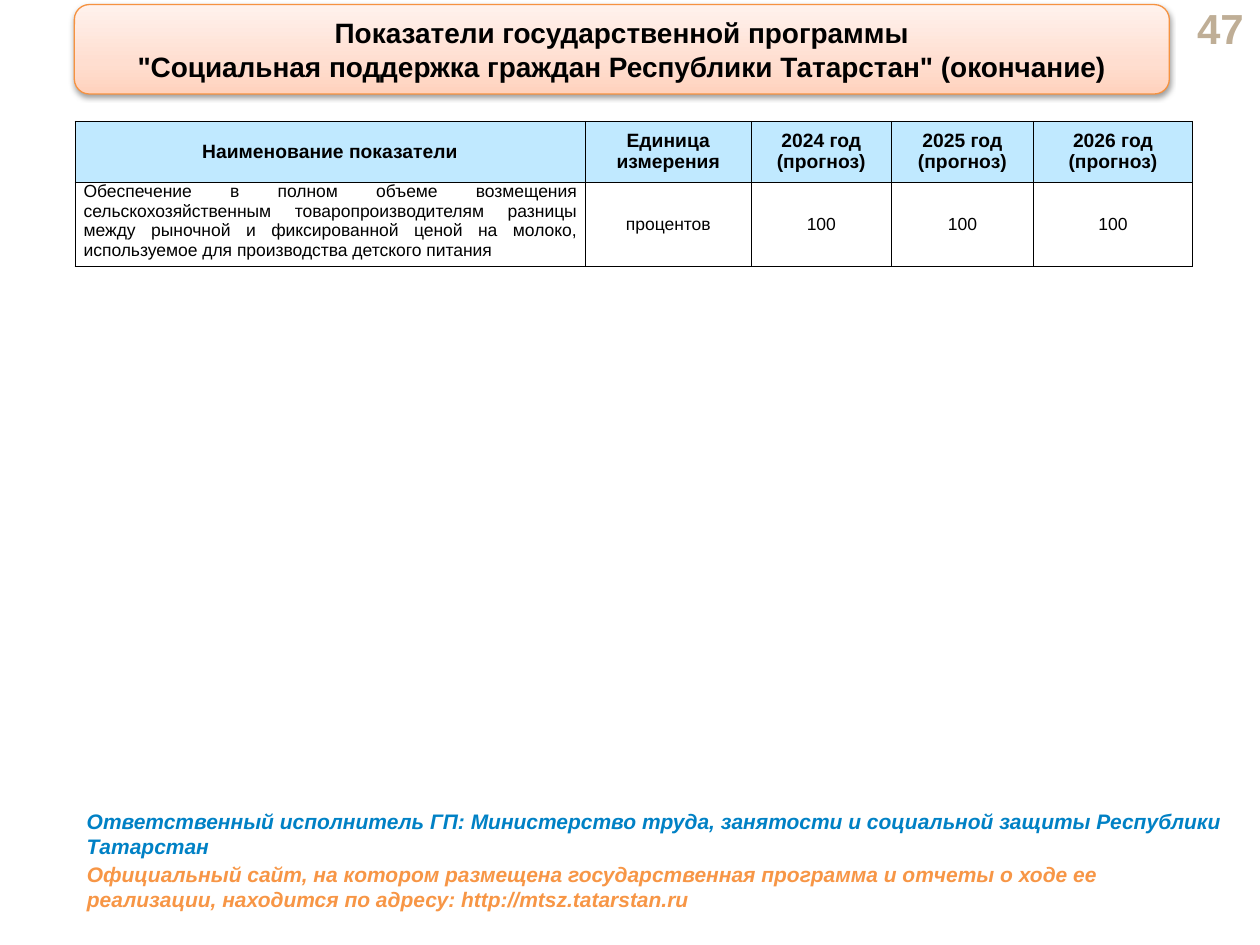
from lxml.etree import SubElement
from pptx import Presentation
from pptx.dml.color import RGBColor
from pptx.enum.shapes import MSO_SHAPE
from pptx.enum.text import MSO_ANCHOR, PP_ALIGN
from pptx.oxml import parse_xml
from pptx.oxml.ns import nsdecls, qn
from pptx.util import Pt

COLORS = {
    "text": "000000", "number": "BFAE96", "header": "C0E9FF", "cell": "FFFFFF",
    "border": "000000", "title_line": "F69240", "executor": "0081C5", "website": "F79646",
}
TITLE_GRADIENT = [(0, "FFD2BD"), (35, "FFDED0"), (100, "FFF2ED")]


def format_paragraph(paragraph, size, color, alignment, bold=False, italic=False):
    paragraph.alignment = alignment
    font = paragraph.font
    font.name, font.size, font.bold, font.italic = "Arial", Pt(size), bold, italic
    font.color.rgb = RGBColor.from_string(COLORS[color])


def add_text(slide, text, left, top, width, height, **style):
    frame = slide.shapes.add_textbox(Pt(left), Pt(top), Pt(width), Pt(height)).text_frame
    frame.word_wrap = True
    frame.text = text
    format_paragraph(frame.paragraphs[0], bold=True, **style)
    return frame


presentation = Presentation()
presentation.slide_width, presentation.slide_height = Pt(720), Pt(540)
slide = presentation.slides.add_slide(presentation.slide_layouts[6])

# Page number
number_frame = add_text(slide, "47", 655.9, 3.6, 61.9, 24.5,
                        size=24, color="number", alignment=PP_ALIGN.RIGHT)
number_frame.vertical_anchor = MSO_ANCHOR.MIDDLE

# Indicator table
rows = [
    ["Наименование показатели", "Единица измерения", "2024 год (прогноз)",
     "2025 год (прогноз)", "2026 год (прогноз)"],
    ["Обеспечение в полном объеме возмещения сельскохозяйственным товаропроизводителям "
     "разницы между рыночной и фиксированной ценой на молоко, используемое для "
     "производства детского питания", "процентов", "100", "100", "100"],
]
column_widths = [291.6, 95, 79.9, 81.4, 90.7]
row_heights = [34.8, 48]
table = slide.shapes.add_table(len(rows), len(column_widths), Pt(42.8), Pt(69.2),
                               Pt(sum(column_widths)), Pt(sum(row_heights))).table
for column, width in zip(table.columns, column_widths):
    column.width = Pt(width)
for row_index, texts in enumerate(rows):
    table.rows[row_index].height = Pt(row_heights[row_index])
    is_header = row_index == 0
    for column_index, text in enumerate(texts):
        is_description = not is_header and column_index == 0
        cell = table.cell(row_index, column_index)
        cell.text = text
        cell.margin_left = cell.margin_right = Pt(5)
        cell.margin_top = cell.margin_bottom = 0
        cell.vertical_anchor = MSO_ANCHOR.TOP if is_description else MSO_ANCHOR.MIDDLE
        format_paragraph(cell.text_frame.paragraphs[0], 11 if is_header else 10, "text",
                         PP_ALIGN.JUSTIFY if is_description else PP_ALIGN.CENTER,
                         bold=is_header)
        # Borders come before the fill in the cell properties
        properties = cell._tc.get_or_add_tcPr()
        for side in ("a:lnL", "a:lnR", "a:lnT", "a:lnB"):
            border = SubElement(properties, qn(side), w=str(Pt(0.25)))
            border_fill = SubElement(border, qn("a:solidFill"))
            SubElement(border_fill, qn("a:srgbClr"), val=COLORS["border"])
        if is_description:
            cell.fill.background()
        else:
            cell.fill.solid()
            cell.fill.fore_color.rgb = RGBColor.from_string(
                COLORS["header" if is_header else "cell"])

# Title panel
title = slide.shapes.add_shape(MSO_SHAPE.ROUNDED_RECTANGLE,
                               Pt(42.5), Pt(2.6), Pt(625.7), Pt(51.1))
title.line.width = Pt(0.75)
title.line.color.rgb = RGBColor.from_string(COLORS["title_line"])
title.text_frame.word_wrap = True
title.text_frame.text = ("Показатели государственной программы\n"
                         '"Социальная поддержка граждан Республики Татарстан" (окончание)')
for paragraph in title.text_frame.paragraphs:
    format_paragraph(paragraph, 16, "text", PP_ALIGN.CENTER, bold=True)

# Three-stop gradient and soft shadow of the panel
stops = "".join(f'<a:gs pos="{position * 1000}"><a:srgbClr val="{color}"/></a:gs>'
                for position, color in TITLE_GRADIENT)
shape_properties = title._element.spPr
shape_properties.find(qn("a:ln")).addprevious(parse_xml(
    f'<a:gradFill {nsdecls("a")} rotWithShape="1"><a:gsLst>{stops}</a:gsLst>'
    '<a:lin ang="16200000" scaled="1"/></a:gradFill>'))
shape_properties.append(parse_xml(
    f'<a:effectLst {nsdecls("a")}><a:outerShdw blurRad="{Pt(3.1)}" dist="{Pt(1.6)}" '
    'dir="5400000" rotWithShape="0"><a:srgbClr val="000000"><a:alpha val="38000"/>'
    '</a:srgbClr></a:outerShdw></a:effectLst>'))

# Responsible ministry and website
footers = [
    ("Ответственный исполнитель ГП: Министерство труда, занятости и социальной защиты "
     "Республики Татарстан", 458.6, 671.8, "executor"),
    ("Официальный сайт, на котором размещена государственная программа и отчеты о ходе ее "
     "реализации, находится по адресу: http://mtsz.tatarstan.ru", 488.9, 630, "website"),
]
for text, top, width, color in footers:
    add_text(slide, text, 42.5, top, width, 36,
             size=12, color=color, alignment=PP_ALIGN.LEFT, italic=True)

presentation.save("out.pptx")
